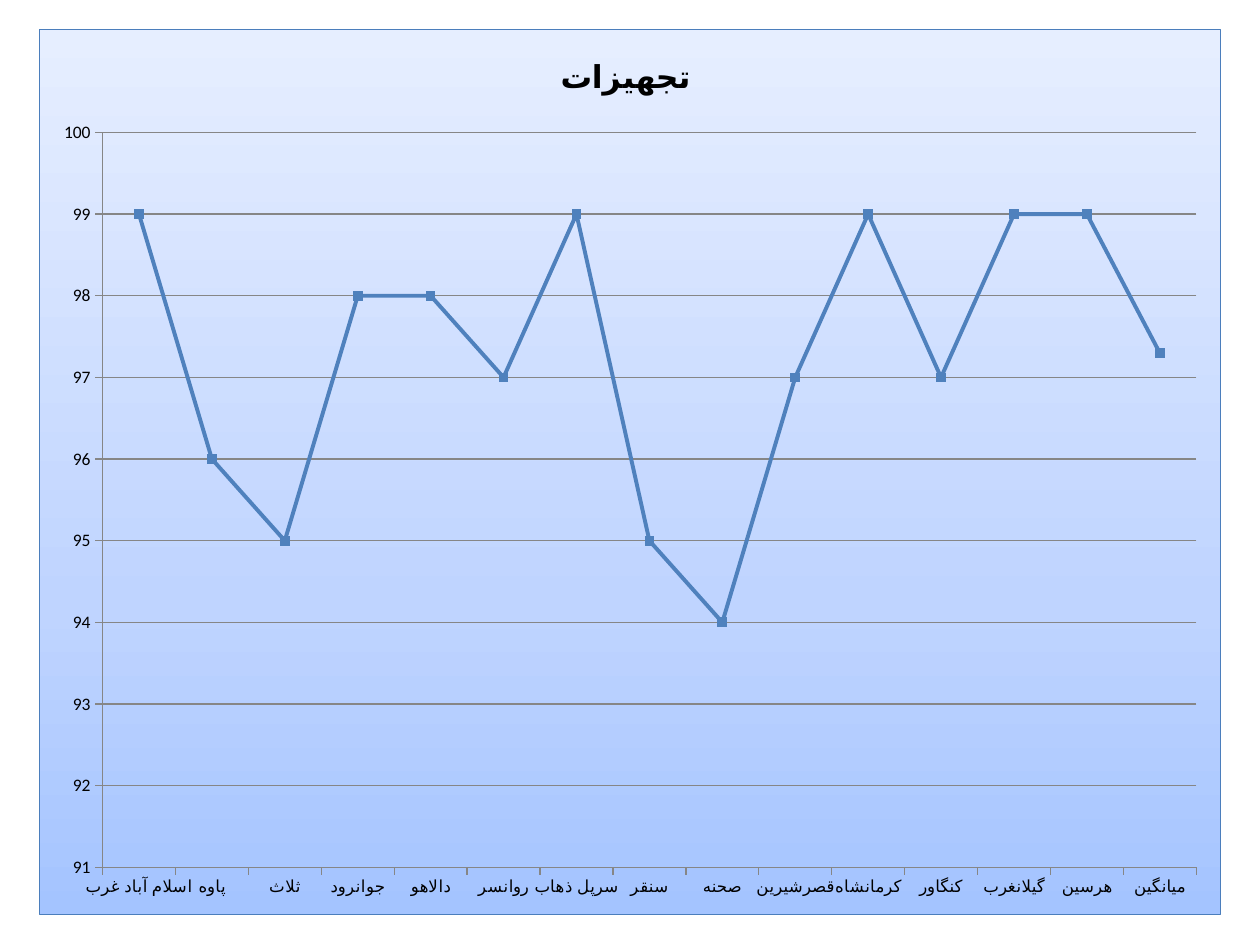
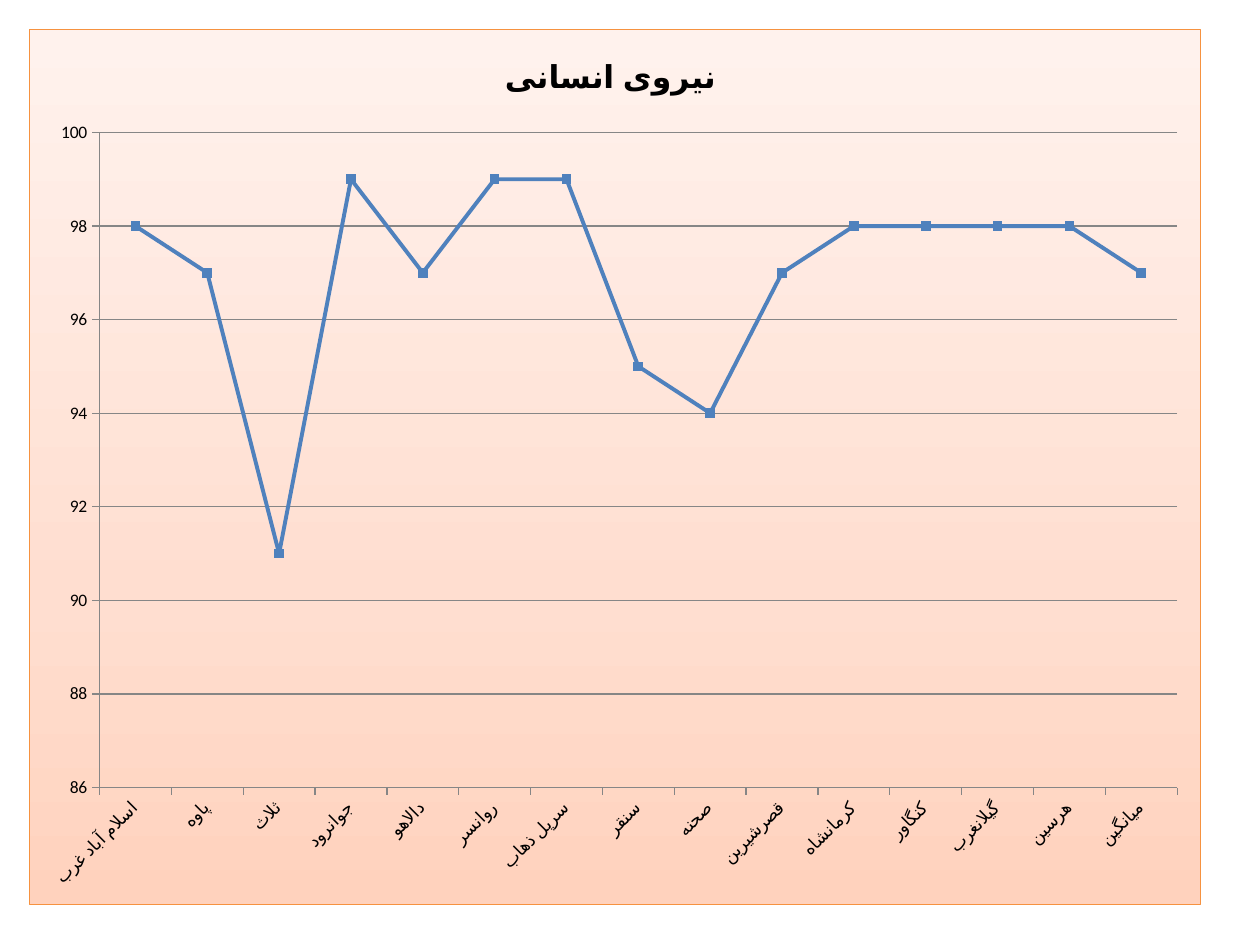
from lxml import etree
from pptx import Presentation
from pptx import util as u
from pptx.chart.data import CategoryChartData
from pptx.dml.color import RGBColor
from pptx.enum import chart as charts
from pptx.oxml import parse_xml
from pptx.oxml.ns import nsdecls, qn

FONT = "Calibri"
BLACK = RGBColor(0x00, 0x00, 0x00)
GRAY = RGBColor(0x86, 0x86, 0x86)
SERIES_BLUE = RGBColor(0x4F, 0x81, 0xBD)
BORDER_BLUE = RGBColor(0x4B, 0x7E, 0xBC)
BORDER_ORANGE = RGBColor(0xF6, 0x92, 0x40)

# Panel gradients, from bottom to top
STOPS = (0, 35, 100)
BLUES = (RGBColor(0xA4, 0xC4, 0xFF), RGBColor(0xBF, 0xD4, 0xFF), RGBColor(0xE6, 0xEE, 0xFF))
ORANGES = (RGBColor(0xFF, 0xD2, 0xBD), RGBColor(0xFF, 0xDE, 0xD0), RGBColor(0xFF, 0xF2, 0xED))

COUNTIES = [
    "اسلام آباد غرب", "پاوه", "ثلاث", "جوانرود", "دالاهو",
    "روانسر", "سرپل ذهاب", "سنقر", "صحنه", "قصرشیرین",
    "کرمانشاه", "کنگاور", "گیلانغرب", "هرسین", "میانگین",
]
EQUIPMENT = [99, 96, 95, 98, 98, 97, 99, 95, 94, 97, 99, 97, 99, 99, 97.3]
STAFF = [98, 97, 91, 99, 97, 99, 99, 95, 94, 97, 98, 98, 98, 98, 97]


def px(length):
    return u.Emu(round(length * 914400 / 126))


def style_panel(chart, colors, border):
    """Give the whole chart area its gradient and outline."""
    stops = "".join(
        f'<a:gs pos="{stop * 1000}"><a:srgbClr val="{color}"/></a:gs>'
        for stop, color in zip(STOPS, colors))
    panel = parse_xml(
        f'<c:spPr {nsdecls("c", "a")}><a:gradFill rotWithShape="1"><a:gsLst>{stops}</a:gsLst>'
        f'<a:lin ang="16200000" scaled="1"/></a:gradFill><a:ln w="9525"><a:solidFill>'
        f'<a:srgbClr val="{border}"/></a:solidFill></a:ln></c:spPr>')
    chart.element.find(qn("c:chart")).addnext(panel)


def place_plot(chart, box, plot):
    """Fix the inner plot area, given in px relative to the chart box."""
    left, top, width, height = plot
    area = chart.element.find(qn("c:chart")).find(qn("c:plotArea"))
    for old in area.findall(qn("c:layout")):
        area.remove(old)
    layout = etree.Element(qn("c:layout"))
    manual = etree.SubElement(layout, qn("c:manualLayout"))
    settings = {
        "layoutTarget": "inner", "xMode": "edge", "yMode": "edge",
        "x": left / box[2], "y": top / box[3],
        "w": width / box[2], "h": height / box[3],
    }
    for name, value in settings.items():
        shown = value if isinstance(value, str) else f"{value:.4f}"
        etree.SubElement(manual, qn(f"c:{name}")).set("val", shown)
    area.insert(0, layout)


def style_axes(chart, low, step, label_angle):
    values, counties = chart.value_axis, chart.category_axis
    values.minimum_scale, values.maximum_scale, values.major_unit = low, 100, step
    values.has_major_gridlines = True
    values.major_gridlines.format.line.color.rgb = GRAY
    values.major_gridlines.format.line.width = u.Pt(0.75)
    values.tick_labels.font.size = u.Pt(10)
    for axis in (values, counties):
        axis.major_tick_mark = charts.XL_TICK_MARK.OUTSIDE
        axis.format.line.color.rgb = GRAY
        axis.format.line.width = u.Pt(0.75)

    # County names: without text properties of their own they stay on one line
    for properties in counties._element.findall(qn("c:txPr")):
        counties._element.remove(properties)
    if label_angle:
        counties.tick_labels.font.size = u.Pt(10)
        body = counties._element.find(qn("c:txPr")).find(qn("a:bodyPr"))
        body.set("rot", str(label_angle * 60000))
        body.set("vert", "horz")


def add_line_slide(deck, title, scores, box, plot, low, step, label_size, label_angle,
                   colors, border):
    page = deck.slides.add_slide(deck.slide_layouts[6])
    data = CategoryChartData(number_format="General")
    data.categories = COUNTIES
    data.add_series(title, scores)
    frame = page.shapes.add_chart(
        charts.XL_CHART_TYPE.LINE_MARKERS, *(px(side) for side in box), data)
    chart = frame.chart
    chart.has_legend = False
    chart.font.name = FONT
    chart.font.size = u.Pt(label_size)
    chart.font.color.rgb = BLACK

    # Title
    span = chart.chart_title.text_frame.paragraphs[0].add_run()
    span.text = title
    span.font.name = FONT
    span.font.size = u.Pt(18)
    span.font.bold = True
    span.font.color.rgb = BLACK
    chart.chart_title.include_in_layout = False

    # Line and markers
    chart.plots[0].vary_by_categories = False
    line = chart.plots[0].series[0]
    line.smooth = False
    line.format.line.color.rgb = SERIES_BLUE
    line.format.line.width = u.Pt(2.25)
    line.marker.style = charts.XL_MARKER_STYLE.SQUARE
    line.marker.size = 5
    line.marker.format.fill.solid()
    line.marker.format.fill.fore_color.rgb = SERIES_BLUE
    line.marker.format.line.color.rgb = SERIES_BLUE

    style_axes(chart, low, step, label_angle)
    place_plot(chart, box, plot)
    style_panel(chart, colors, border)


def main():
    deck = Presentation()
    deck.slide_width, deck.slide_height = px(1260), px(945)
    add_line_slide(deck, "تجهیزات ", EQUIPMENT, (39, 29, 1182, 886), (63, 103, 1095, 736),
                   91, 1, 9.5, 0, BLUES, BORDER_BLUE)
    add_line_slide(deck, "نیروی انسانی ", STAFF, (29, 29, 1172, 876), (70, 103, 1079, 656),
                   86, 2, 10, -45, ORANGES, BORDER_ORANGE)
    deck.save("out.pptx")


if __name__ == "__main__":
    main()
